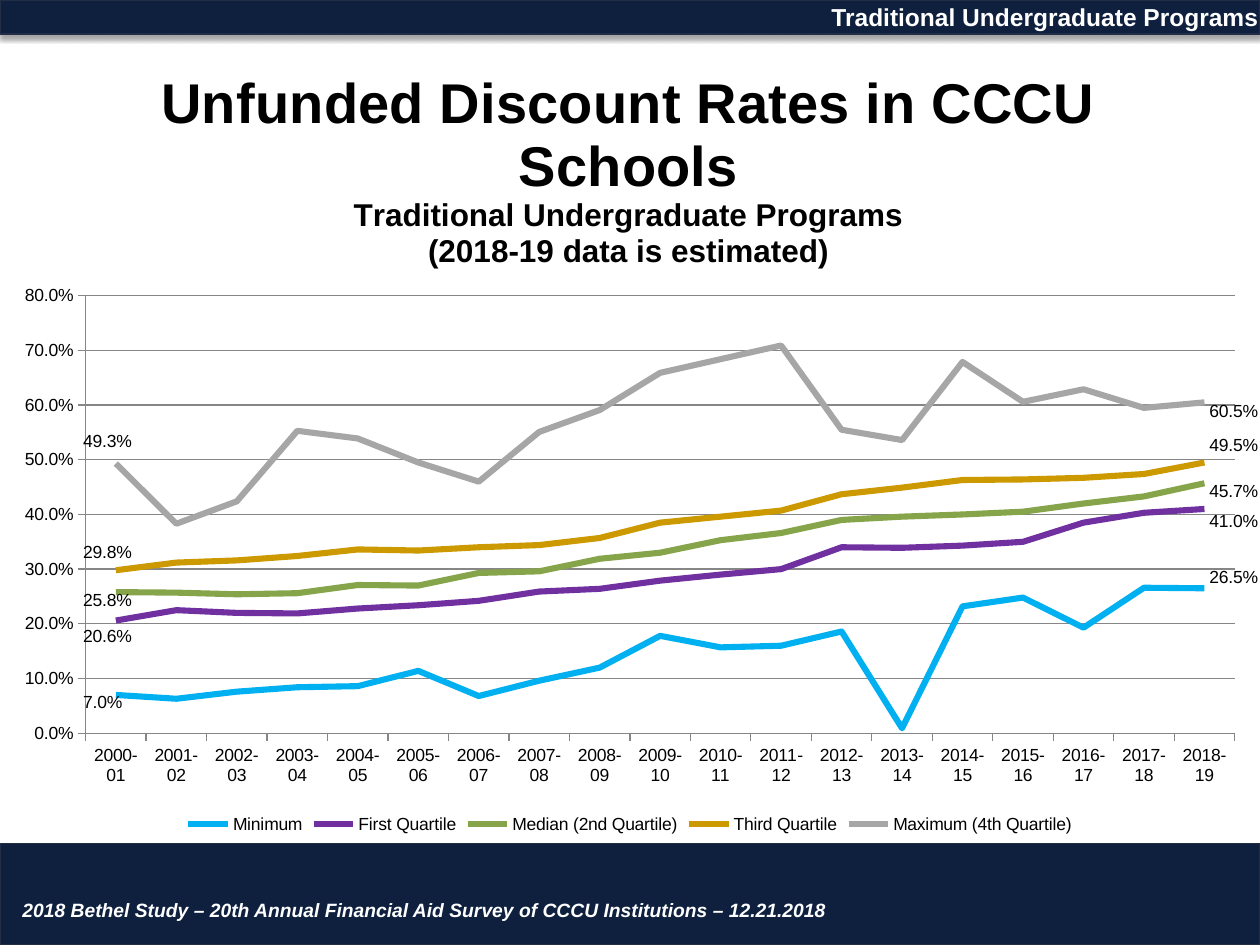
import pptx
import pptx.chart.data
import pptx.dml.color
import pptx.enum.chart
import pptx.enum.shapes
import pptx.enum.text
import pptx.oxml
import pptx.oxml.ns
import pptx.util

RGB = pptx.dml.color.RGBColor
NAVY = RGB(0x0E, 0x20, 0x3E)
EDGE = RGB(0x22, 0x2D, 0x46)
WHITE = RGB(0xFF, 0xFF, 0xFF)
BLACK = RGB(0, 0, 0)
GRAY = RGB(0x86, 0x86, 0x86)
BLUE = RGB(0x00, 0xB0, 0xF0)
PURPLE = RGB(0x70, 0x30, 0xA0)
GREEN = RGB(0x86, 0xA4, 0x4A)
GOLD = RGB(0xCC, 0x99, 0x00)
SILVER = RGB(0xA6, 0xA6, 0xA6)

HEADS = [
    ("Unfunded Discount Rates in CCCU Schools", 32),
    ("Traditional Undergraduate Programs", 18),
    ("(2018-19 data is estimated)", 18),
]
YEARS = [f"{year}-{(year + 1) % 100:02d}" for year in range(2000, 2019)]
RATES = [
    ("Minimum", BLUE, (0.01, -0.014),
     [0.07, 0.063, 0.076, 0.084, 0.086, 0.114, 0.068, 0.096, 0.12, 0.178,
      0.157, 0.16, 0.186, 0.009, 0.232, 0.248, 0.193, 0.266, 0.265]),
    ("First Quartile", PURPLE, (0.02, 0.016),
     [0.206, 0.225, 0.22, 0.219, 0.228, 0.234, 0.242, 0.259, 0.264, 0.279,
      0.29, 0.3, 0.34, 0.339, 0.343, 0.35, 0.385, 0.403, 0.41]),
    ("Median (2nd Quartile)", GREEN, (0.01, 0.01),
     [0.258, 0.257, 0.254, 0.256, 0.271, 0.27, 0.293, 0.296, 0.319, 0.33,
      0.353, 0.366, 0.39, 0.396, 0.4, 0.405, 0.42, 0.433, 0.457]),
    ("Third Quartile", GOLD, (-0.022, -0.021),
     [0.298, 0.312, 0.316, 0.324, 0.336, 0.334, 0.34, 0.344, 0.357, 0.385,
      0.396, 0.407, 0.437, 0.449, 0.463, 0.464, 0.467, 0.474, 0.495]),
    ("Maximum (4th Quartile)", SILVER, (-0.027, 0.012),
     [0.493, 0.383, 0.424, 0.553, 0.539, 0.495, 0.46, 0.551, 0.591, 0.659,
      0.684, 0.709, 0.555, 0.536, 0.679, 0.606, 0.629, 0.595, 0.605]),
]


def layout(modes, **sizes):
    tags = "".join(f'<c:{tag} val="{mode}"/>' for tag, mode in modes)
    tags += "".join(f'<c:{tag} val="{size}"/>' for tag, size in sizes.items())
    return pptx.oxml.parse_xml(
        f'<c:layout {pptx.oxml.ns.nsdecls("c")}>'
        f"<c:manualLayout>{tags}</c:manualLayout></c:layout>"
    )


class Deck:
    font = "Arial"

    def __init__(self):
        self.file = pptx.Presentation()
        self.file.slide_width = pptx.util.Inches(10)
        self.file.slide_height = pptx.util.Inches(7.5)
        self.slide = self.file.slides.add_slide(self.file.slide_layouts[6])

    def place(self, left, top, width, height):
        wide, high = self.file.slide_width, self.file.slide_height
        return [round(share * size) for share, size in
                zip((left, top, width, height), (wide, high, wide, high))]

    def style(self, font, size, color, bold=False, italic=False):
        font.name = self.font
        font.size = pptx.util.Pt(size)
        font.color.rgb = color
        font.bold = bold
        font.italic = italic

    def rule(self, line, color, width):
        line.color.rgb = color
        line.width = pptx.util.Pt(width)

    def bar(self, *area):
        kind = pptx.enum.shapes.MSO_SHAPE.RECTANGLE
        shape = self.slide.shapes.add_shape(kind, *self.place(*area))
        shape.shadow.inherit = False
        shape.fill.solid()
        shape.fill.fore_color.rgb = NAVY
        self.rule(shape.line, EDGE, 0.75)
        glow = shape._element.spPr.find(pptx.oxml.ns.qn("a:effectLst"))
        glow.append(pptx.oxml.parse_xml(
            f'<a:outerShdw {pptx.oxml.ns.nsdecls("a")} blurRad="{pptx.util.Pt(3.1)}" '
            f'dist="{pptx.util.Pt(1.8)}" dir="5400000" rotWithShape="0">'
            '<a:srgbClr val="000000"><a:alpha val="35000"/></a:srgbClr></a:outerShdw>'
        ))

    def text(self, words, size, italic, *area):
        frame = self.slide.shapes.add_textbox(*self.place(*area)).text_frame
        frame.word_wrap = True
        frame.vertical_anchor = pptx.enum.text.MSO_ANCHOR.TOP
        frame.text = words
        self.style(frame.paragraphs[0].runs[0].font, size, WHITE, True, italic)

    def chart(self, *area):
        data = pptx.chart.data.CategoryChartData(number_format="0.0%")
        data.categories = YEARS
        for name, color, shifts, rates in RATES:
            data.add_series(name, rates)
        kind = pptx.enum.chart.XL_CHART_TYPE.LINE
        chart = self.slide.shapes.add_chart(kind, *self.place(*area), data).chart
        self.style(chart.font, 10, BLACK)
        self.title(chart)
        self.axes(chart)
        chart.has_legend = True
        chart.legend.position = pptx.enum.chart.XL_LEGEND_POSITION.BOTTOM
        chart.legend.include_in_layout = False
        for line, (name, color, shifts, rates) in zip(chart.plots[0].series, RATES):
            self.line(line, color, shifts)

    def title(self, chart):
        chart.has_title = True
        title = chart.chart_title
        title.include_in_layout = False
        frame = title.text_frame
        frame.text = "\n".join(words for words, size in HEADS)
        for para, (words, size) in zip(frame.paragraphs, HEADS):
            para.alignment = pptx.enum.text.PP_ALIGN.CENTER
            self.style(para.runs[0].font, size, BLACK, True)
        root = title._element
        for old in root.findall(pptx.oxml.ns.qn("c:layout")):
            root.remove(old)
        spot = layout([("xMode", "edge"), ("yMode", "edge")], x=0.125, y=0.035)
        root.find(pptx.oxml.ns.qn("c:tx")).addnext(spot)

    def axes(self, chart):
        marks = pptx.enum.chart.XL_TICK_MARK
        for axis in (chart.category_axis, chart.value_axis):
            axis.major_tick_mark = marks.OUTSIDE
            axis.minor_tick_mark = marks.NONE
            self.rule(axis.format.line, GRAY, 0.75)
            self.style(axis.tick_labels.font, 10, BLACK)
        rate = chart.value_axis
        rate.minimum_scale, rate.maximum_scale, rate.major_unit = 0, 0.8, 0.1
        rate.tick_labels.number_format = "0.0%"
        rate.tick_labels.number_format_is_linked = False
        rate.has_major_gridlines = True
        self.rule(rate.major_gridlines.format.line, GRAY, 0.75)
        plot = chart._chartSpace.chart.plotArea
        for old in plot.findall(pptx.oxml.ns.qn("c:layout")):
            plot.remove(old)
        modes = [("layoutTarget", "inner"), ("xMode", "edge"), ("yMode", "edge")]
        plot.insert(0, layout(modes, x=0.068, y=0.322, w=0.912, h=0.546))

    def line(self, line, color, shifts):
        line.smooth = False
        line.marker.style = pptx.enum.chart.XL_MARKER_STYLE.NONE
        self.rule(line.format.line, color, 3.5)
        line.data_labels.show_value = False
        for spot, left, top in zip((0, len(YEARS) - 1), (-0.03, 0), shifts):
            label = line.points[spot].data_label
            self.style(label.font, 10, BLACK)
            label.position = pptx.enum.chart.XL_LABEL_POSITION.RIGHT
            root = label._dLbl
            root.find(pptx.oxml.ns.qn("c:idx")).addnext(layout([], x=left, y=top))


def main():
    deck = Deck()
    deck.bar(0, 0, 1, 0.036)
    deck.bar(0, 0.893, 1, 0.107)
    deck.text("2018 Bethel Study – 20th Annual Financial Aid Survey of CCCU "
              "Institutions – 12.21.2018", 11, True, 0.008, 0.944, 0.733, 0.036)
    deck.text("Traditional Undergraduate Programs", 14, False,
              0.65, -0.004, 0.392, 0.045)
    deck.chart(0, 0.04, 1, 0.848)
    deck.file.save("out.pptx")


if __name__ == "__main__":
    main()
